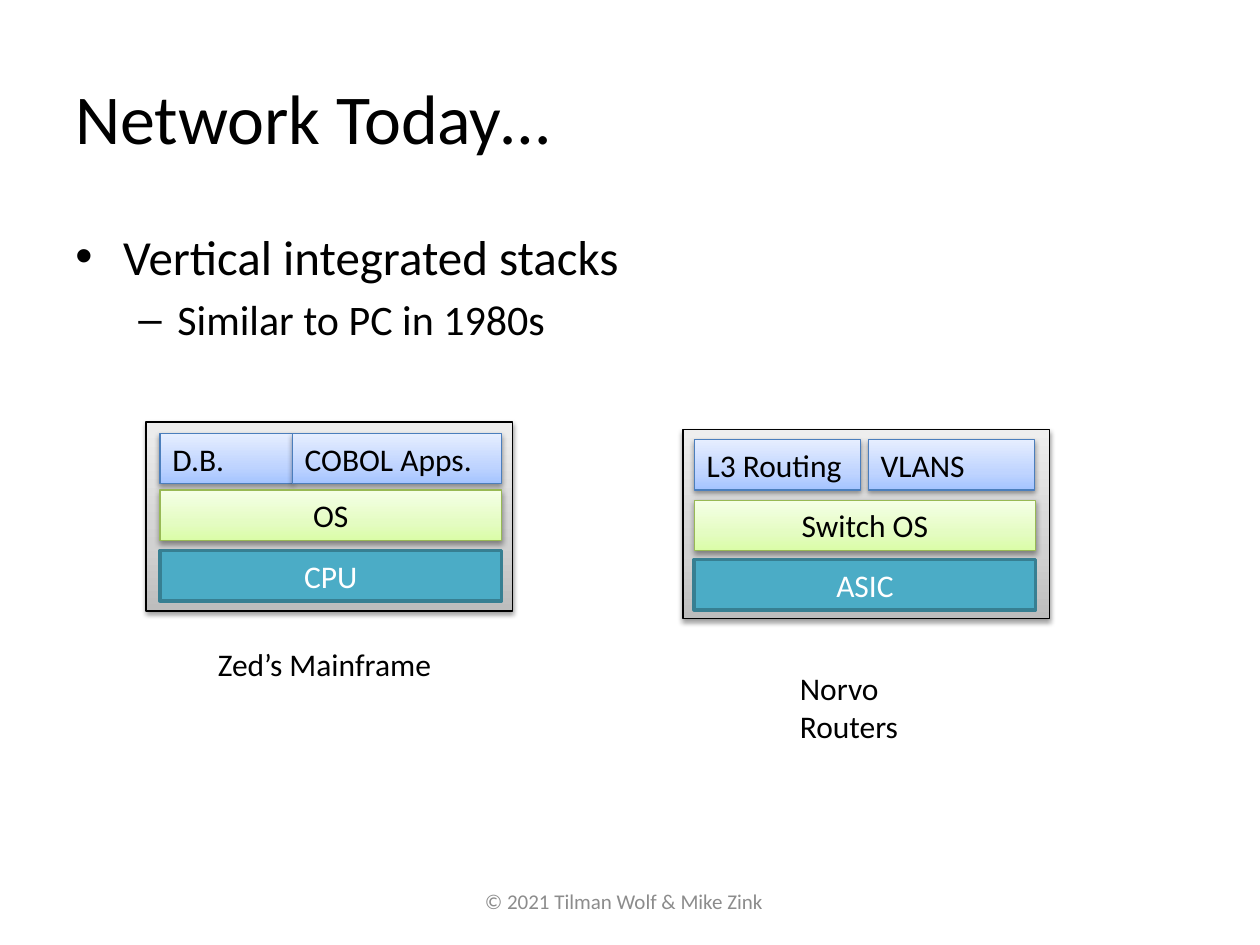
from copy import deepcopy
from dataclasses import dataclass

from lxml import etree
from pptx import Presentation
from pptx import util as u
from pptx.dml.color import RGBColor
from pptx.enum import shapes, text
from pptx.oxml import ns


@dataclass(frozen=True)
class Theme:
    font: str = "Calibri"
    ink: str = "000000"
    pale: str = "FFFFFF"
    grey: str = "8C8C8C"
    title: int = 40
    point: int = 28
    sub: int = 24
    label: int = 18
    foot: int = 12
    case: tuple = (("BDBDBD", "D1D1D1", "EEEEEE"), "000000", 0.75)
    app: tuple = (("A4C4FF", "BFD4FF", "E6EEFF"), "4B7EBC", 0.75)
    soft: tuple = (("DAFDA7", "E4FCC2", "F5FFE7"), "98B955", 0.75)
    chip: tuple = (("4BACC6",), "377F92", 2)


T = Theme()
ROW = 0.4
WIDE = 2.71


def rgb(code):
    return RGBColor.from_string(code)


def style(para, words, size, color=T.ink):
    para.text = words
    para.font.name = T.font
    para.font.size = u.Pt(size)
    para.font.color.rgb = rgb(color)


def put(slide, box, words, size, color=T.ink, wrap=False):
    frame = slide.shapes.add_textbox(*map(u.Inches, box)).text_frame
    frame.word_wrap = wrap
    style(frame.paragraphs[0], words, size, color)
    return frame


def bullet(para, mark, left, hang):
    para.space_before = u.Pt(para.font.size.pt * 0.2)
    props = para._p.get_or_add_pPr()
    props.set("marL", str(u.Inches(left)))
    props.set("indent", str(u.Inches(-hang)))
    etree.SubElement(props, ns.qn("a:buFont"), typeface="Arial")
    etree.SubElement(props, ns.qn("a:buChar"), char=mark)
    first = props.find(ns.qn("a:defRPr"))
    if first is not None:
        props.append(first)


def blend(shape, tones):
    shape.fill.gradient()
    shape.fill.gradient_angle = 90
    stops = shape._element.spPr.find(ns.qn("a:gradFill")).find(ns.qn("a:gsLst"))
    stops.insert(1, deepcopy(stops[0]))
    for stop, tone, spot in zip(shape.fill.gradient_stops, tones, (0, 0.35, 1)):
        stop.color.rgb = rgb(tone)
        stop.position = spot


def shade(shape):
    effects = shape._element.spPr.find(ns.qn("a:effectLst"))
    outer = etree.SubElement(
        effects, ns.qn("a:outerShdw"), blurRad=str(u.Pt(3.1)),
        dist=str(u.Pt(1.6)), dir="5400000", rotWithShape="0")
    color = etree.SubElement(outer, ns.qn("a:srgbClr"), val=T.ink)
    etree.SubElement(color, ns.qn("a:alpha"), val="38000")


def block(group, box, look, words="", mid=False, color=T.ink):
    tones, edge, width = look
    shape = group.shapes.add_shape(
        shapes.MSO_SHAPE.RECTANGLE, *map(u.Inches, box))
    shape.line.color.rgb = rgb(edge)
    shape.line.width = u.Pt(width)
    shape.shadow.inherit = False
    if len(tones) > 1:
        blend(shape, tones)
        shade(shape)
    else:
        shape.fill.solid()
        shape.fill.fore_color.rgb = rgb(tones[0])
    if words:
        frame = shape.text_frame
        frame.word_wrap = True
        frame.vertical_anchor = text.MSO_ANCHOR.TOP
        para = frame.paragraphs[0]
        style(para, words, T.label, color)
        para.alignment = text.PP_ALIGN.CENTER if mid else text.PP_ALIGN.LEFT


def stack(slide, case, left, rows, apps, soft, chip):
    group = slide.shapes.add_group_shape()
    block(group, (*case, 2.91, 1.5), T.case)
    top, mid, low = rows
    for words, shift, width in apps:
        block(group, (left + shift, top, width, ROW), T.app, words)
    block(group, (left, mid, WIDE, ROW), T.soft, soft, True)
    block(group, (left, low, WIDE, ROW), T.chip, chip, True, T.pale)


def main():
    deck = Presentation()
    deck.slide_width, deck.slide_height = u.Inches(10), u.Inches(7.5)
    slide = deck.slides.add_slide(deck.slide_layouts[6])

    put(slide, (3.75, 7, 2.44, 0.5), "© 2021 Tilman Wolf & Mike Zink",
        T.foot, T.grey)
    head = put(slide, (0.5, 0.3, 9, 1.25), "Network Today…", T.title, wrap=True)
    head.vertical_anchor = text.MSO_ANCHOR.MIDDLE

    body = put(slide, (0.5, 1.75, 9, 1.43), "Vertical integrated stacks",
               T.point, wrap=True)
    bullet(body.paragraphs[0], "•", 0.38, 0.38)
    sub = body.add_paragraph()
    sub.level = 1
    style(sub, "Similar to PC in 1980s", T.sub)
    bullet(sub, "–", 0.81, 0.31)

    put(slide, (1.63, 5.07, 1.98, ROW), "Zed’s Mainframe", T.label)
    put(slide, (6.25, 5.26, 1.59, ROW), "Norvo Routers", T.label)

    stack(slide, (1.16, 3.35), 1.27, (3.44, 3.89, 4.37),
          (("D.B.", 0, 1.05), ("COBOL Apps.", 1.05, 1.66)), "OS", "CPU")
    stack(slide, (5.42, 3.41), 5.51, (3.49, 3.97, 4.44),
          (("L3 Routing", 0, 1.32), ("VLANS", 1.38, 1.32)),
          "Switch OS", "ASIC")
    deck.save("out.pptx")


if __name__ == "__main__":
    main()
